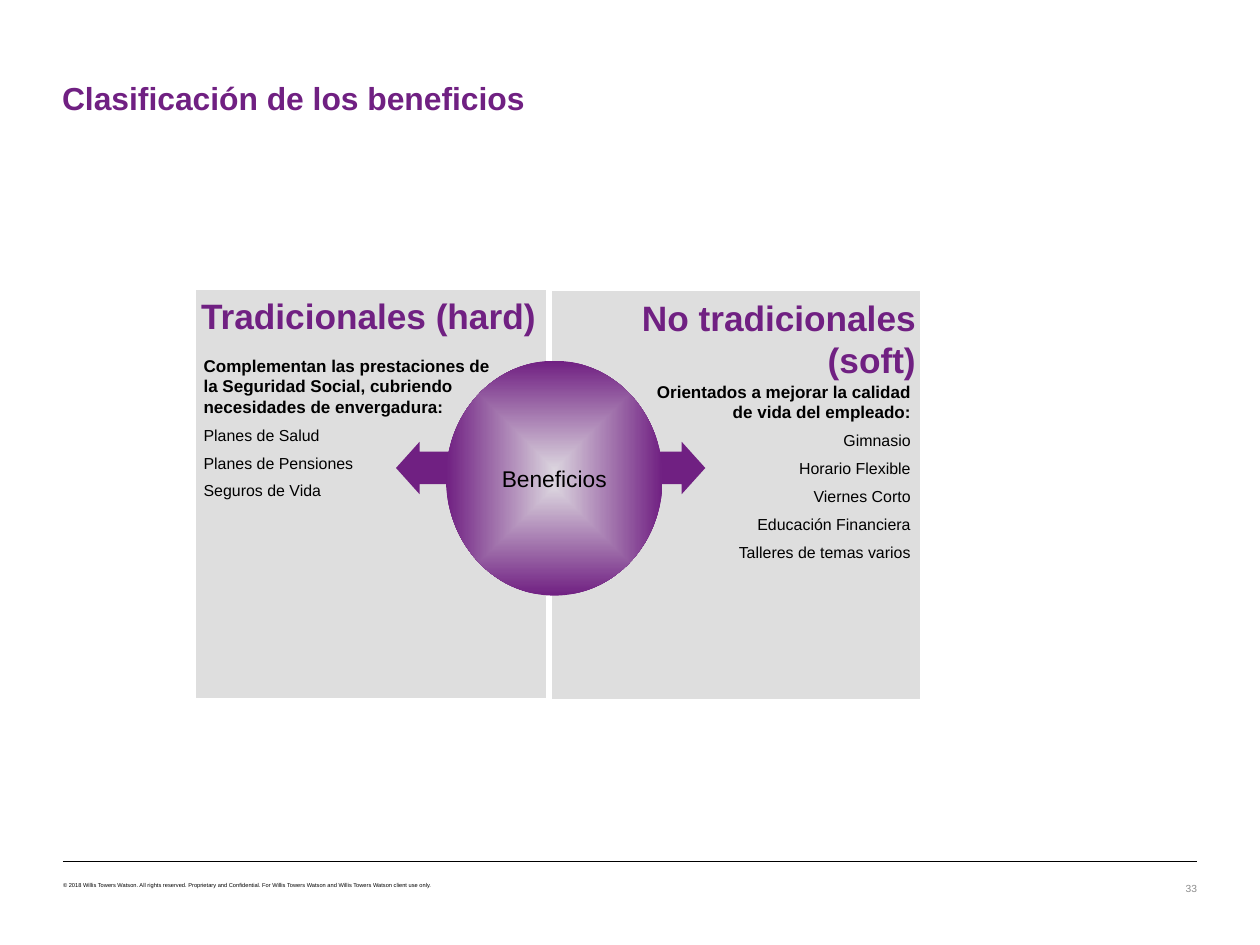
"""Build the slide that classifies employee benefits as traditional or non-traditional."""
from lxml import etree
from pptx import Presentation
from pptx.dml.color import RGBColor
from pptx.enum.shapes import MSO_CONNECTOR, MSO_SHAPE
from pptx.enum.text import MSO_ANCHOR, PP_ALIGN
from pptx.oxml.ns import qn
from pptx.util import Inches, Pt

PURPLE = RGBColor(0x70, 0x20, 0x82)
LILAC = RGBColor(0xDB, 0xD4, 0xDE)
PANEL_GRAY = RGBColor(0xDE, 0xDE, 0xDE)
NUMBER_GRAY = RGBColor(0x8C, 0x8C, 0x8C)
BLACK = RGBColor(0x00, 0x00, 0x00)
WHITE = RGBColor(0xFF, 0xFF, 0xFF)
LEFT, CENTER, RIGHT = PP_ALIGN.LEFT, PP_ALIGN.CENTER, PP_ALIGN.RIGHT
TOP, MIDDLE = MSO_ANCHOR.TOP, MSO_ANCHOR.MIDDLE
RECTANGLE, OVAL = MSO_SHAPE.RECTANGLE, MSO_SHAPE.OVAL
LEFT_ARROW, RIGHT_ARROW = MSO_SHAPE.LEFT_ARROW, MSO_SHAPE.RIGHT_ARROW
STRAIGHT = MSO_CONNECTOR.STRAIGHT

deck = Presentation()
deck.slide_width, deck.slide_height = Inches(15.4), Inches(11.55)
page = deck.slides.add_slide(deck.slide_layouts[6])


def add_box(kind, left, top, width, height, fill=None):
    """Add a preset shape without outline, or a text box if kind is None."""
    frame = [Inches(value) for value in (left, top, width, height)]
    if kind is None:
        return page.shapes.add_textbox(*frame)
    box = page.shapes.add_shape(kind, *frame)
    box.shadow.inherit = False
    box.line.fill.background()
    if fill is not None:
        box.fill.solid()
        box.fill.fore_color.rgb = fill
    return box


def write(box, lines, align=LEFT, anchor=TOP, inset=(0.1, 0.1)):
    """Write one paragraph per (text, size, colour, bold) line."""
    frame = box.text_frame
    frame.word_wrap = True
    frame.vertical_anchor = anchor
    frame.margin_left = frame.margin_right = Inches(inset[0])
    frame.margin_top = frame.margin_bottom = Inches(inset[1])
    for index, (text, size, color, bold) in enumerate(lines):
        para = frame.add_paragraph() if index else frame.paragraphs[0]
        para.alignment = align
        if index:
            para.space_before = Pt(7.7)
        span = para.add_run()
        span.text = text
        span.font.name = "Arial"
        span.font.size = Pt(size)
        span.font.bold = bold
        span.font.color.rgb = color


footer_rule = page.shapes.add_connector(
    STRAIGHT, Inches(0.77), Inches(10.52), Inches(14.63), Inches(10.52))
footer_rule.line.color.rgb = BLACK
footer_rule.line.width = Pt(0.25)
etree.SubElement(footer_rule._element.spPr, qn("a:effectLst"))

title = add_box(RECTANGLE, 0.66, 0.88, 9.64, 0.62, WHITE)
write(title, [("Clasificación de los beneficios", 28, PURPLE, True)],
      anchor=MIDDLE, inset=(0.1, 0.05))

page_number = add_box(None, 13.99, 10.78, 0.64, 0.15)
write(page_number, [("33", 9, NUMBER_GRAY, False)], RIGHT, inset=(0, 0))

copyright_note = add_box(None, 0.77, 10.78, 8.89, 0.08)
write(copyright_note, [(
    "© 2018 Willis Towers Watson. All rights reserved. Proprietary and Confidential. "
    "For Willis Towers Watson and Willis Towers Watson client use only.",
    5, BLACK, False)], inset=(0, 0))

PANELS = [
    ((2.36, 3.5), (2.39, 4.24, 3.87, 2.02), LEFT, "Tradicionales (hard)",
     "Complementan las prestaciones de la Seguridad Social, cubriendo necesidades de envergadura:",
     ["Planes de Salud", "Planes de Pensiones", "Seguros de Vida"]),
    ((6.71, 3.52), (7.85, 4.56, 3.38, 3.28), RIGHT, "No tradicionales (soft)",
     "Orientados a mejorar la calidad de vida del empleado:",
     ["Gimnasio", "Horario Flexible", "Viernes Corto", "Educación Financiera",
      "Talleres de temas varios"]),
]
for corner, list_frame, align, heading, purpose, benefits in PANELS:
    panel = add_box(RECTANGLE, *corner, 4.58, 5.07, PANEL_GRAY)
    panel.line.color.rgb = WHITE
    panel.line.width = Pt(6)
    write(panel, [(heading, 31, PURPLE, True)], align)
    benefit_lines = [(benefit, 14, BLACK, False) for benefit in benefits]
    write(add_box(None, *list_frame), [(purpose, 15, BLACK, True)] + benefit_lines, align)

for kind, left in ((LEFT_ARROW, 4.84), (RIGHT_ARROW, 7.8)):
    arrow = add_box(kind, left, 5.4, 0.82, 0.64, PURPLE)
    arrow.adjustments[0] = 0.62
    arrow.adjustments[1] = 0.45

hub = add_box(OVAL, 5.45, 4.41, 2.65, 2.87)
hub.fill.gradient()
for stop, position, color in zip(hub.fill.gradient_stops, (0, 1), (LILAC, PURPLE)):
    stop.position = position
    stop.color.rgb = color
gradient = hub._element.spPr.find(qn("a:gradFill"))
linear = gradient.find(qn("a:lin"))
radial = etree.Element(qn("a:path"), {"path": "shape"})
etree.SubElement(radial, qn("a:fillToRect"), {side: "50000" for side in "ltrb"})
gradient.replace(linear, radial)
write(hub, [("Beneficios", 20, BLACK, False)], CENTER, MIDDLE, (0.1, 0.05))

deck.save("out.pptx")
